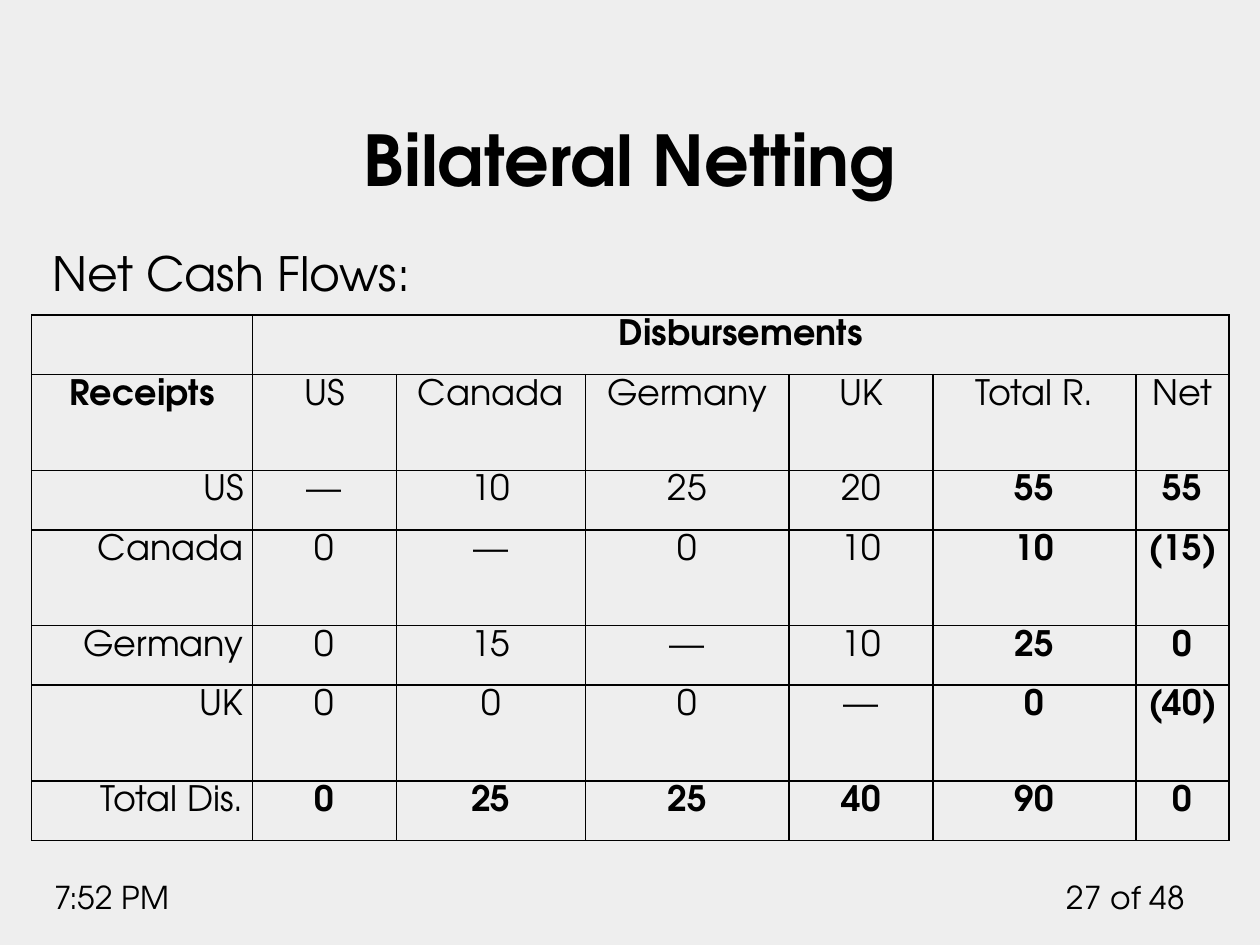
from lxml.etree import SubElement
from pptx import Presentation
from pptx.dml.color import RGBColor
from pptx.enum.text import MSO_ANCHOR, PP_ALIGN
from pptx.oxml.ns import qn
from pptx.util import Cm, Pt

COLORS = {"background": "EEEEEE", "ink": "000000"}
FONT = "TeX Gyre Adventor"
COLUMN_WIDTHS = [4.45, 2.9, 3.81, 4.11, 2.9, 4.09, 1.88]
ROW_HEIGHTS = [1.2, 1.93, 1.2, 1.93, 1.2, 1.93, 1.2]
CASH_FLOWS = [
    ["", "Disbursements", "", "", "", "", ""],
    ["Receipts", "US", "Canada", "Germany", "UK", "Total R.", "Net"],
    ["US", "—", "10", "25", "20", "55", "55"],
    ["Canada", "0", "—", "0", "10", "10", "(15)"],
    ["Germany", "0", "15", "—", "10", "25", "0"],
    ["UK", "0", "0", "0", "—", "0", "(40)"],
    ["Total Dis.", "0", "25", "25", "40", "90", "0"],
]


def write(tf, text, size=18, bold=False, align=PP_ALIGN.LEFT, spacing=None):
    """Write one formatted paragraph into a text frame."""
    p = tf.paragraphs[0]
    p.alignment = align
    p.line_spacing = spacing
    r = p.add_run()
    r.text = text
    r.font.name = FONT
    r.font.size = Pt(size)
    r.font.bold = bold
    r.font.color.rgb = RGBColor.from_string(COLORS["ink"])


def add_text(s, text, left, top, width, height, anchor=MSO_ANCHOR.TOP, **style):
    """Add a wrapped text box, placed in centimetres."""
    sp = s.shapes.add_textbox(Cm(left), Cm(top), Cm(width), Cm(height))
    tf = sp.text_frame
    tf.word_wrap = True
    tf.vertical_anchor = anchor
    write(tf, text, **style)


def outline(cell):
    """Draw thin lines on all four sides of a cell and clear its fill."""
    properties = cell._tc.get_or_add_tcPr()
    for side in ("a:lnL", "a:lnR", "a:lnT", "a:lnB"):
        line = SubElement(properties, qn(side), w=str(Pt(1)))
        fill = SubElement(line, qn("a:solidFill"))
        SubElement(fill, qn("a:srgbClr"), val=COLORS["ink"])
    cell.fill.background()


def cell_style(row, column):
    """Return the weight and alignment that a table position calls for."""
    last = len(CASH_FLOWS) - 1
    heading = row == 0 or (row == 1 and column == 0)
    total = row > 1 and (column >= 5 or (row == last and column > 0))
    label = row > 1 and column == 0
    return {"bold": heading or total,
            "align": PP_ALIGN.RIGHT if label else PP_ALIGN.CENTER}


def add_cash_table(s, left, top):
    """Add the ruled table of net cash flows."""
    table = s.shapes.add_table(
        len(ROW_HEIGHTS), len(COLUMN_WIDTHS), Cm(left), Cm(top),
        Cm(sum(COLUMN_WIDTHS)), Cm(sum(ROW_HEIGHTS))).table
    table.first_row = table.horz_banding = False
    for column, width in zip(table.columns, COLUMN_WIDTHS):
        column.width = Cm(width)
    for row, height in zip(table.rows, ROW_HEIGHTS):
        row.height = Cm(height)
    table.cell(0, 1).merge(table.cell(0, len(COLUMN_WIDTHS) - 1))
    for i, values in enumerate(CASH_FLOWS):
        for j, value in enumerate(values):
            cell = table.cell(i, j)
            cell.margin_left = cell.margin_right = Cm(0.18)
            cell.margin_top = cell.margin_bottom = Cm(0)
            outline(cell)
            if value:
                write(cell.text_frame, value, size=20, spacing=1.15,
                      **cell_style(i, j))


def main():
    """Build the slide and save it."""
    prs = Presentation()
    prs.slide_width, prs.slide_height = Cm(25.4), Cm(19.05)
    s = prs.slides.add_slide(prs.slide_layouts[6])
    background = s.background.fill
    background.solid()
    background.fore_color.rgb = RGBColor.from_string(COLORS["background"])
    add_text(s, "27 of 48", 21.16, 17.58, 2.97, 1.02, align=PP_ALIGN.RIGHT)
    add_text(s, "7:52 PM", 0.84, 17.58, 4.01, 1.02)
    add_text(s, "Net Cash Flows:", 0.81, 4.8, 23.75, 1.35, size=27)
    add_text(s, "Bilateral Netting", 1.27, 0.99, 22.86, 3.18, size=40,
             bold=True, align=PP_ALIGN.CENTER, anchor=MSO_ANCHOR.BOTTOM)
    add_cash_table(s, 0.64, 6.35)
    prs.save("out.pptx")


if __name__ == "__main__":
    main()
